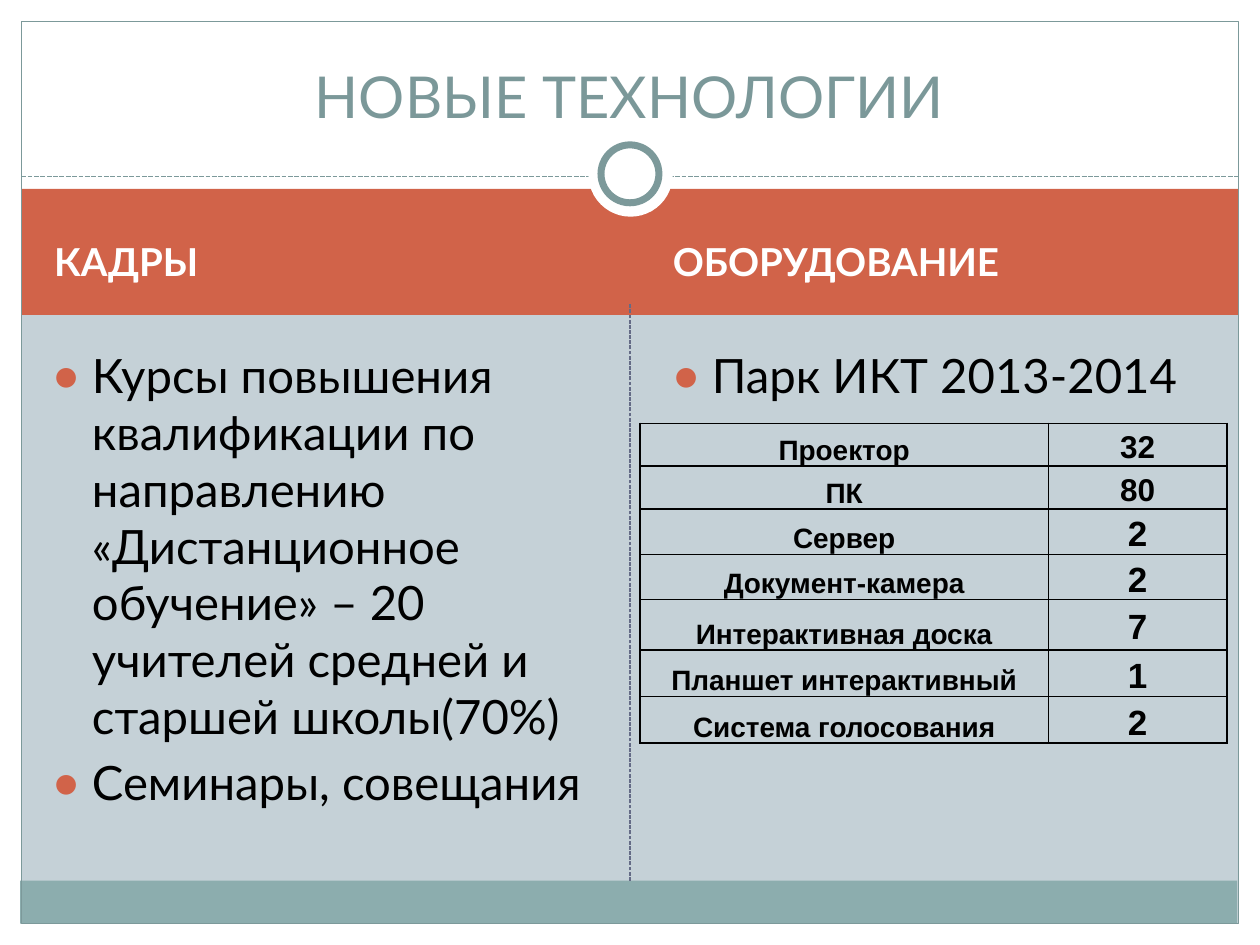
import pptx
import pptx.util
import pptx.dml.color
import pptx.enum.dml
import pptx.enum.shapes
import pptx.enum.text
import pptx.oxml
import pptx.oxml.ns

Inches, Pt = pptx.util.Inches, pptx.util.Pt
RGB = pptx.dml.color.RGBColor.from_string
SHAPE = pptx.enum.shapes.MSO_SHAPE
ANCHOR = pptx.enum.text.MSO_ANCHOR
ALIGN = pptx.enum.text.PP_ALIGN
NS = pptx.oxml.ns.nsdecls("a")

theme = {
    "background": "C5D1D7", "white": "FFFFFF", "black": "000000",
    "accent": "D16349", "footer": "8CADAE", "frame": "7C999A",
    "title": "7B9899", "divider": "646B86",
    "font": "Lato", "table_font": "Arial",
    "title_size": 33, "heading_size": 22, "body_size": 27,
    "label_size": 16, "count_size": 18, "large_count_size": 20,
}


def write(tf, texts, size, color, font="font", bold=False, align=ALIGN.LEFT):
    fmt = {"name": theme[font], "size": Pt(theme[size]), "bold": bold}
    for i, text in enumerate(texts):
        p = tf.paragraphs[0] if i == 0 else tf.add_paragraph()
        p.alignment = align
        r = p.add_run()
        r.text = text
        for key, value in fmt.items():
            setattr(r.font, key, value)
        r.font.color.rgb = RGB(theme[color])


prs = pptx.Presentation()
prs.slide_width, prs.slide_height = Inches(10), Inches(7.5)
s = prs.slides.add_slide(prs.slide_layouts[4])
s.background.fill.solid()
s.background.fill.fore_color.rgb = RGB(theme["background"])

lines = [
    ((5, 6.99, 5, 2.41), "divider", 0.75),
    ((0.17, 1.4, 9.83, 1.4), "frame", 0.9),
]
shapes = [
    (SHAPE.RECTANGLE, (0, 0, 10, 1.58), "white", None),
    (SHAPE.RECTANGLE, (0, 7.33, 10, 0.17), "white", None),
    (SHAPE.RECTANGLE, (0, 0, 0.17, 7.5), "white", None),
    (SHAPE.RECTANGLE, (9.83, 0, 0.17, 7.5), "white", None),
    (SHAPE.RECTANGLE, (0.17, 1.5, 9.66, 1), "accent", None),
    (SHAPE.RECTANGLE, (0.16, 6.99, 9.66, 0.34), "footer", None),
    (SHAPE.RECTANGLE, (0.17, 0.17, 9.66, 7.16), None, 0.75),
    (SHAPE.OVAL, (4.67, 1.05, 0.67, 0.67), "white", None),
    (SHAPE.OVAL, (4.77, 1.15, 0.46, 0.46), "white", 4),
]
drawn = []
for kind, box, fill, width in shapes:
    sp = s.shapes.add_shape(kind, *map(Inches, box))
    sp.shadow.inherit = False
    if fill:
        sp.fill.solid()
        sp.fill.fore_color.rgb = RGB(theme[fill])
    else:
        sp.fill.background()
    if width:
        sp.line.color.rgb = RGB(theme["frame"])
        sp.line.width = Pt(width)
    else:
        sp.line.fill.background()
    drawn.append(sp)

for (x1, y1, x2, y2), color, width in lines:
    line = s.shapes.add_connector(
        pptx.enum.shapes.MSO_CONNECTOR.STRAIGHT,
        Inches(x1), Inches(y1), Inches(x2), Inches(y2))
    line.line.color.rgb = RGB(theme[color])
    line.line.width = Pt(width)
    line.line.dash_style = pptx.enum.dml.MSO_LINE.SQUARE_DOT
    line._element.spPr.append(pptx.oxml.parse_xml(f"<a:effectLst {NS}/>"))
    drawn[6]._element.addprevious(line._element)

courses = ("Курсы повышения квалификации по направлению «Дистанционное обучение» – "
           "20 учителей средней и старшей школы(70%)")
title = (["НОВЫЕ ТЕХНОЛОГИИ"], "title_size", "title", "font", False, ALIGN.CENTER)
placeholders = [
    (1, (0.33, 1.67, 4.42, 0.8), ANCHOR.MIDDLE,
     (["КАДРЫ"], "heading_size", "white", "font", True)),
    (3, (5.24, 1.67, 4.42, 0.8), ANCHOR.MIDDLE,
     (["ОБОРУДОВАНИЕ"], "heading_size", "white", "font", True)),
    (2, (0.33, 2.7, 4.42, 4.18), ANCHOR.TOP,
     ([courses, "Семинары, совещания"], "body_size", "black")),
    (4, (5.25, 2.7, 4.42, 4.18), ANCHOR.TOP,
     (["Парк ИКТ 2013-2014"], "body_size", "black")),
    (0, (0.33, 0.25, 9.33, 0.83), ANCHOR.BOTTOM, title),
]
by_idx = {sp.placeholder_format.idx: sp for sp in s.placeholders}
for idx, box, anchor, content in placeholders:
    sp = by_idx[idx]
    for key, value in zip(("left", "top", "width", "height"), box):
        setattr(sp, key, Inches(value))
    tf = sp.text_frame
    fmt = {"word_wrap": True, "vertical_anchor": anchor,
           "auto_size": pptx.enum.text.MSO_AUTO_SIZE.NONE}
    for key, value in fmt.items():
        setattr(tf, key, value)
    write(tf, *content)
    s.shapes._spTree.append(sp._element)
    if idx in (2, 4):
        for p in tf.paragraphs:
            pPr = p._p.get_or_add_pPr()
            pPr.set("marL", str(Inches(0.3)))
            pPr.set("indent", str(Inches(-0.3)))
            for xml in (f'<a:buClr {NS}><a:srgbClr val="{theme["accent"]}"/></a:buClr>',
                        f'<a:buSzPct {NS} val="85000"/>',
                        f'<a:buFont {NS} typeface="{theme["font"]}"/>',
                        f'<a:buChar {NS} char="●"/>'):
                pPr.append(pptx.oxml.parse_xml(xml))

equipment = [
    ("Проектор", "32", 0.34), ("ПК", "80", 0.34), ("Сервер", "2", 0.36),
    ("Документ-камера", "2", 0.36), ("Интерактивная доска", "7", 0.4),
    ("Планшет интерактивный", "1", 0.37), ("Система голосования", "2", 0.37),
]
table = s.shapes.add_table(len(equipment), 2, Inches(5.08), Inches(3.36),
                           Inches(4.66), Inches(2.54)).table
table.first_row = table.horz_banding = False
for column, width in zip(table.columns, (3.24, 1.42)):
    column.width = Inches(width)
for row, (label, count, height) in zip(table.rows, equipment):
    row.height = Inches(height)
    count_size = "count_size" if len(count) == 2 else "large_count_size"
    values = ((label, "label_size", ANCHOR.BOTTOM), (count, count_size, ANCHOR.MIDDLE))
    for cell, (text, size, anchor) in zip(row.cells, values):
        fmt = {"vertical_anchor": anchor, "margin_left": Inches(0.07),
               "margin_right": Inches(0.07), "margin_top": 0, "margin_bottom": 0}
        for key, value in fmt.items():
            setattr(cell, key, value)
        write(cell.text_frame, [text], size, "black", "table_font", True, ALIGN.CENTER)
        cell.text_frame.paragraphs[0].line_spacing = 1.15
        cell.fill.background()
        tcPr = cell._tc.get_or_add_tcPr()
        for i, side in enumerate("LRTB"):
            tcPr.insert(i, pptx.oxml.parse_xml(
                f'<a:ln{side} {NS} w="{Pt(1)}"><a:solidFill>'
                f'<a:srgbClr val="{theme["black"]}"/></a:solidFill></a:ln{side}>'))

prs.save("out.pptx")
